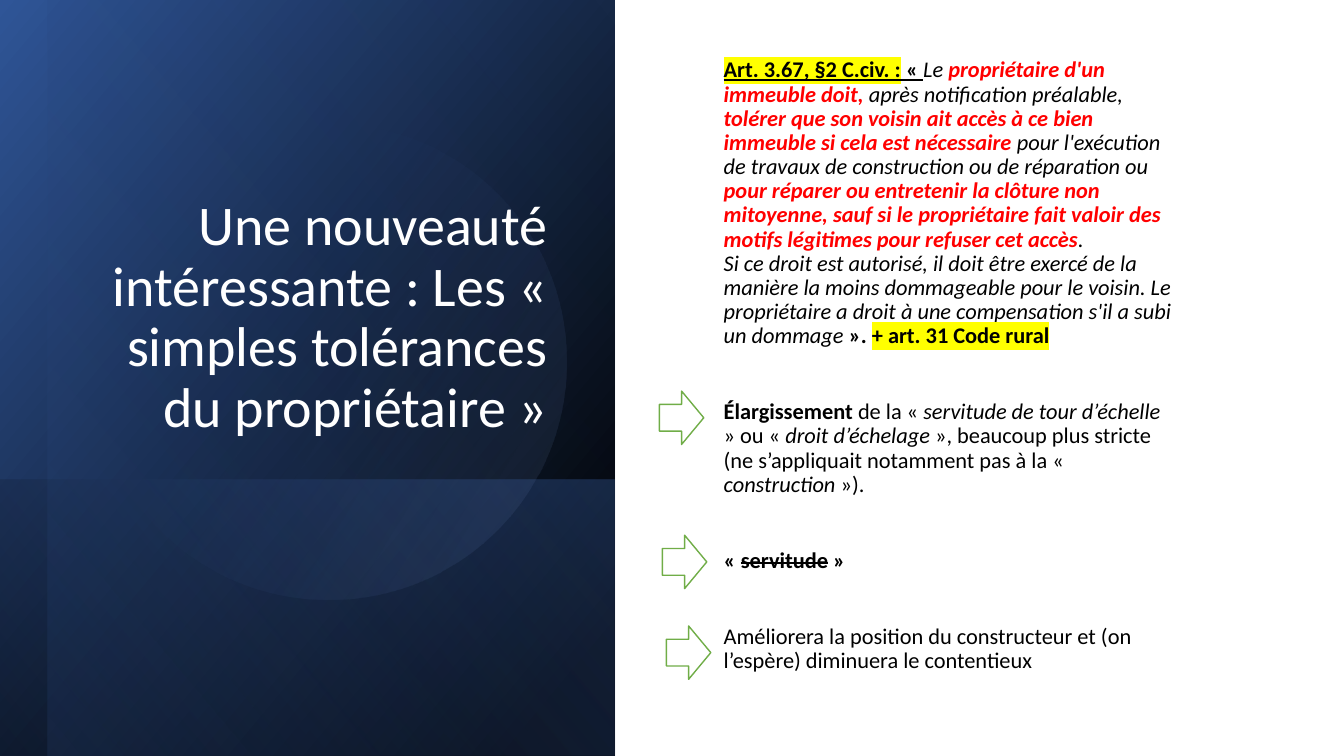
import pptx
import pptx.util
import pptx.dml.color
import pptx.enum.shapes
import pptx.enum.text
import pptx.oxml
import pptx.oxml.ns

Inches, Pt = pptx.util.Inches, pptx.util.Pt
RGB = pptx.dml.color.RGBColor
SHAPE = pptx.enum.shapes.MSO_SHAPE
ALIGN, ANCHOR = pptx.enum.text.PP_ALIGN, pptx.enum.text.MSO_ANCHOR
qn = pptx.oxml.ns.qn

COLORS = {"white": "FFFFFF", "black": "000000", "red": "FF0000", "yellow": "FFFF00",
          "navy": "2F5597", "blue": "4472C4", "sky": "8FAADC", "green": "70AD47"}

# Content
TITLE = "Une nouveauté intéressante : Les « simples tolérances du propriétaire »"

BOLD, ITALIC = dict(bold=True), dict(italic=True)
KEY = dict(bold=True, italic=True, color="red")
BREAK = ("\n", {})
PARAGRAPHS = [
    [("Art. 3.67, §2 C.civ. :", dict(bold=True, underline=True, highlight="yellow")),
     (" « ", dict(bold=True, underline=True)),
     ("Le ", ITALIC),
     ("propriétaire d'un immeuble doit,", KEY),
     (" après notification préalable, ", ITALIC),
     ("tolérer que son voisin ait accès à ce bien immeuble si cela est nécessaire ", KEY),
     ("pour l'exécution de travaux de construction ou de réparation ou ", ITALIC),
     ("pour réparer ou entretenir la clôture non mitoyenne, sauf si le propriétaire "
      "fait valoir des motifs légitimes pour refuser cet accès", KEY),
     (".", ITALIC),
     BREAK,
     ("Si ce droit est autorisé, il doit être exercé de la manière la moins dommageable "
      "pour le voisin. Le propriétaire a droit à une compensation s'il a subi un dommage ",
      ITALIC),
     ("». ", BOLD),
     ("+ art. 31 Code rural", dict(bold=True, highlight="yellow"))],
    [("Élargissement ", BOLD),
     ("de la « ", {}),
     ("servitude de tour d’échelle ", ITALIC),
     ("» ou « ", {}),
     ("droit d’échelage ", ITALIC),
     ("», beaucoup plus stricte (ne s’appliquait notamment pas à la « ", {}),
     ("construction", ITALIC),
     (" »).", {})],
    [("« ", BOLD), ("servitude", dict(bold=True, strike=True)), (" »", BOLD)],
    [("Améliorera la position du constructeur et (on l’espère) diminuera le contentieux", {})],
]

# Panel layers: shape, box, rotation, flipped, gradient angle, stops (%, colour, opacity %)
LAYERS = [
    (SHAPE.RECTANGLE, (-0.7, 0.7, 7.5, 6.1), 90, True, 50,
     [(8, "black", 100), (100, "navy", 100)]),
    (SHAPE.RECTANGLE, (1.67, 3.08, 2.74, 6.1), 90, True, 130,
     [(2, "blue", 29), (100, "black", 30)]),
    (SHAPE.RECTANGLE, (-0.46, 0.93, 7.5, 5.63), 90, True, 130,
     [(0, "black", 0), (99, "blue", 11)]),
    (SHAPE.OVAL, (0.9, 1.23, 4.72, 4.72), 101.6, False, 290,
     [(39, "blue", 0), (100, "sky", 15)]),
]
ARROWS = [(6.54, 3.88), (6.57, 5.31), (6.61, 6.21)]
ARROW_SIZE = (0.44, 0.53)
PARAGRAPH_GAP, WIDE_GAP = 10, 37


def rgb(name):
    return RGB.from_string(COLORS[name])


def add_run(p, text, size=16, color="black", bold=False, italic=False,
            underline=False, strike=False, highlight=None):
    if text == "\n":
        p.add_line_break()
        return
    r = p.add_run()
    r.text = text
    f = r.font
    f.name, f.size = "Calibri", Pt(size)
    f.bold, f.italic, f.underline = bold, italic, underline
    f.color.rgb = rgb(color)
    rpr = r._r.get_or_add_rPr()
    if strike:
        rpr.set("strike", "sngStrike")
    if highlight:
        rpr.find(qn("a:solidFill")).addnext(pptx.oxml.parse_xml(
            f'<a:highlight {pptx.oxml.ns.nsdecls("a")}>'
            f'<a:srgbClr val="{COLORS[highlight]}"/></a:highlight>'))


def add_shape(kind, box):
    s = slide.shapes.add_shape(kind, *map(Inches, box))
    s.shadow.inherit = False
    return s


def set_gradient(s, angle, stops):
    gs = "".join(
        f'<a:gs pos="{pos * 1000}"><a:srgbClr val="{COLORS[color]}">'
        f'<a:alpha val="{opacity * 1000}"/></a:srgbClr></a:gs>'
        for pos, color, opacity in stops)
    s._element.spPr.find(qn("a:prstGeom")).addnext(pptx.oxml.parse_xml(
        f'<a:gradFill {pptx.oxml.ns.nsdecls("a")} rotWithShape="1"><a:gsLst>{gs}</a:gsLst>'
        f'<a:lin ang="{angle * 60000}" scaled="0"/></a:gradFill>'))


prs = pptx.Presentation()
prs.slide_width, prs.slide_height = Inches(13.33), Inches(7.5)
slide = prs.slides.add_slide(prs.slide_layouts[5])

# Blue panel
for kind, box, rotation, flipped, angle, stops in LAYERS:
    s = add_shape(kind, box)
    s.rotation = rotation
    if flipped:
        s._element.spPr.find(qn("a:xfrm")).set("flipH", "1")
    set_gradient(s, angle, stops)
    s.line.fill.background()

# Title, brought in front of the panel
title = slide.shapes.title
slide.shapes._spTree.append(title._element)
title.left, title.top, title.width, title.height = map(Inches, (0.9, 0.71, 4.63, 3.7))
tf = title.text_frame
tf.word_wrap, tf.vertical_anchor = True, ANCHOR.BOTTOM
tf.auto_size = pptx.enum.text.MSO_AUTO_SIZE.NONE
p = tf.paragraphs[0]
p.alignment, p.line_spacing = ALIGN.RIGHT, 0.9
add_run(p, TITLE, size=40, color="white")

# Legal text
tf = slide.shapes.add_textbox(*map(Inches, (7.08, 0.35, 4.66, 6.8))).text_frame
tf.word_wrap, tf.vertical_anchor = True, ANCHOR.MIDDLE
tf.margin_bottom = Inches(0.29)
for i, runs in enumerate(PARAGRAPHS):
    p = tf.add_paragraph() if i else tf.paragraphs[0]
    p.line_spacing = 0.9
    p.space_before = Pt(WIDE_GAP if i else PARAGRAPH_GAP)
    for text, style in runs:
        add_run(p, text, **style)

# Arrows
for position in ARROWS:
    s = add_shape(SHAPE.RIGHT_ARROW, position + ARROW_SIZE)
    s.fill.solid()
    s.fill.fore_color.rgb = rgb("white")
    s.line.color.rgb = rgb("green")
    s.line.width = Pt(1)

prs.save("out.pptx")
